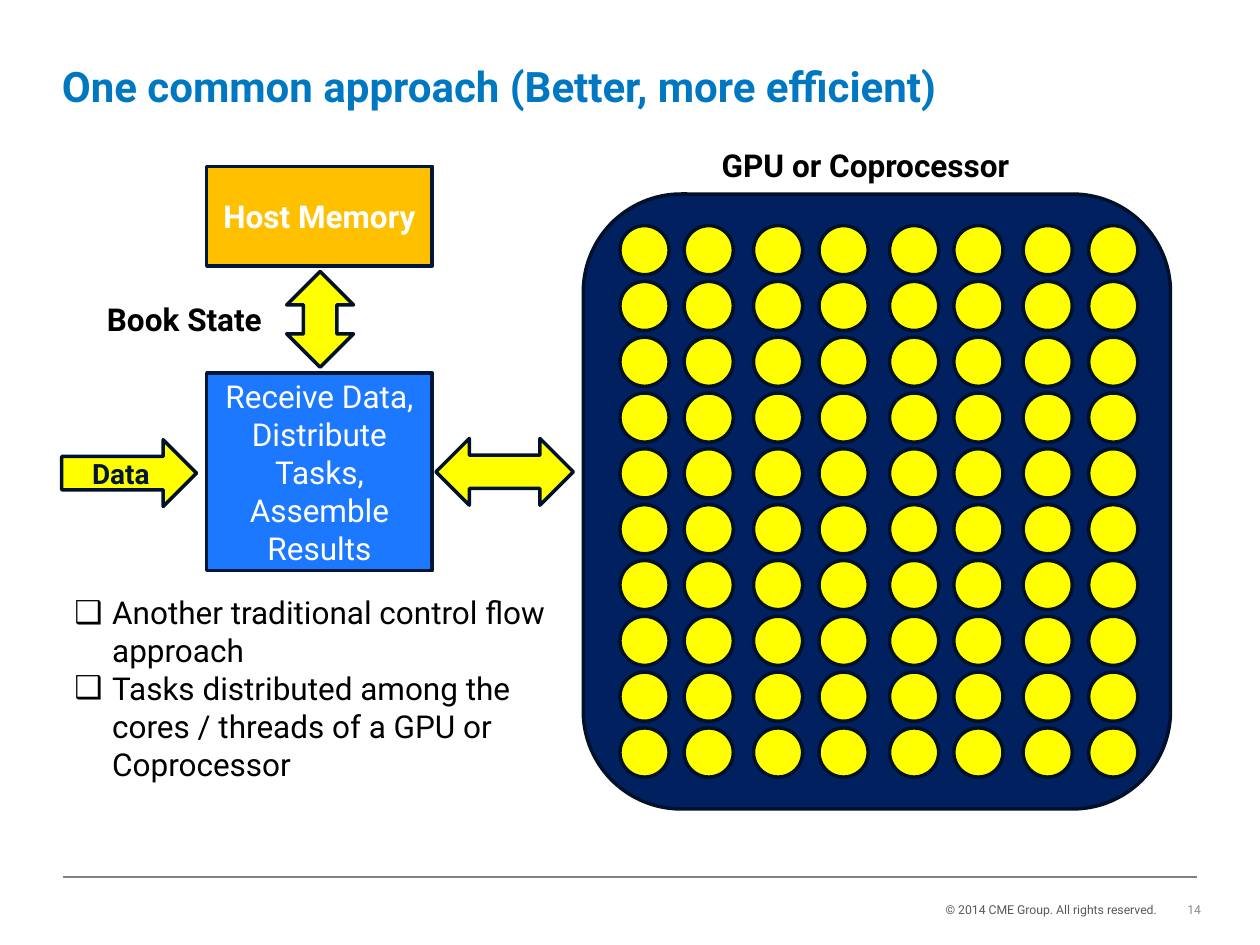
from itertools import product

from lxml.etree import SubElement
from pptx import Presentation
from pptx.dml.color import RGBColor
from pptx.enum.shapes import MSO_CONNECTOR as Connector, MSO_SHAPE as Shape
from pptx.enum.text import MSO_ANCHOR as Anchor, MSO_AUTO_SIZE as AutoSize, PP_ALIGN as Align
from pptx.oxml.ns import qn
from pptx.util import Inches, Pt

FONT = "Roboto"
BLACK, WHITE, YELLOW = "000000", "FFFFFF", "FFFF00"
NAVY, EDGE, BOX_EDGE = "002060", "001129", "001738"


def paint(color_format, value):
    color_format.rgb = RGBColor.from_string(value)


def apply(target, values):
    for key, value in values.items():
        setattr(target, key, value)


def place(part, box):
    apply(part, dict(zip(("left", "top", "width", "height"), map(Inches, box))))


def style(paragraph, size, color, bold=False, align=Align.LEFT):
    paragraph.alignment = align
    apply(paragraph.font, {"name": FONT, "size": Pt(size), "bold": bold})
    paint(paragraph.font.color, color)


def add_block(slide, kind, box, fill, edge=EDGE):
    block = slide.shapes.add_shape(kind, *map(Inches, box))
    block.shadow.inherit = False
    block.fill.solid()
    paint(block.fill.fore_color, fill)
    block.line.width = Pt(2)
    paint(block.line.color, edge)
    return block


def add_caption(block, text, size, color, bold=False):
    frame = block.text_frame
    apply(frame, {"text": text, "word_wrap": True, "vertical_anchor": Anchor.MIDDLE})
    style(frame.paragraphs[0], size, color, bold, Align.CENTER)


def add_label(slide, box, text, size, color, wrap=False, anchor=Anchor.TOP, **look):
    frame = slide.shapes.add_textbox(*map(Inches, box)).text_frame
    apply(frame, {"text": text, "word_wrap": wrap, "vertical_anchor": anchor})
    style(frame.paragraphs[0], size, color, **look)


def fill_title(slide, box, text):
    title = slide.shapes.title
    place(title, box)
    apply(title.text_frame, {
        "text": text, "word_wrap": True, "auto_size": AutoSize.NONE,
        "vertical_anchor": Anchor.TOP, "margin_left": 0, "margin_right": 0,
        "margin_top": Pt(3), "margin_bottom": 0,
    })
    style(title.text_frame.paragraphs[0], 24, "0078C1", bold=True)


def fill_list(slide, box, items):
    body = slide.placeholders[1]
    place(body, box)
    frame = body.text_frame
    apply(frame, {"text": "\n".join(items), "word_wrap": True,
                  "auto_size": AutoSize.NONE, "vertical_anchor": Anchor.TOP})
    for paragraph in frame.paragraphs:
        apply(paragraph, {"space_before": Pt(0), "space_after": Pt(0)})
        properties = paragraph._p.get_or_add_pPr()
        properties.set("marL", str(Inches(0.3)))
        properties.set("indent", str(Inches(-0.3)))
        SubElement(properties, qn("a:buChar"), char="❑")
        style(paragraph, 18, BLACK)


def draw_coprocessor(slide, box):
    left, top, width, height = box
    add_block(slide, Shape.ROUNDED_RECTANGLE, box, NAVY)
    add_label(slide, (left + 1, top - 0.43, 2.7, 0.4), "GPU or Coprocessor", 18, BLACK, bold=True)
    core, row_pitch, half_pitch = 0.39, 0.443, 2.14
    for half, offset, row in product(range(2), (0, 0.51, 1.06, 1.58), range(10)):
        x = left + 0.29 + half * half_pitch + offset
        y = top + 0.25 + row * row_pitch
        add_block(slide, Shape.OVAL, (x, y, core, core), YELLOW)


def draw_host(slide, box):
    left, top, width, height = box
    memory = add_block(slide, Shape.RECTANGLE, (left + 1.15, top, 1.79, 0.79), "FFC000", BOX_EDGE)
    add_caption(memory, "Host Memory", 18, WHITE, bold=True)

    book_state = add_block(slide, Shape.LEFT_RIGHT_ARROW,
                           (left + 1.67, top + 0.95, 0.76, 0.53), YELLOW)
    book_state.rotation = 90
    add_label(slide, (left + 0.26, top + 1.01, 1.52, 0.4), "Book State", 18, BLACK, bold=True)

    dispatcher = add_block(slide, Shape.RECTANGLE,
                           (left + 1.15, top + 1.64, 1.79, 1.57), "1C79FF", BOX_EDGE)
    add_caption(dispatcher, "Receive Data, Distribute Tasks, Assemble Results", 18, WHITE)

    data = add_block(slide, Shape.RIGHT_ARROW, (left, top + 2.17, 1.07, 0.53), YELLOW)
    add_caption(data, "Data", 16, BOX_EDGE, bold=True)
    add_block(slide, Shape.LEFT_RIGHT_ARROW, (left + 2.97, top + 2.16, 1.09, 0.53), YELLOW)


def draw_footer(slide, box):
    left, top, width, height = box
    ends = left, top, left + width, top
    rule = slide.shapes.add_connector(Connector.STRAIGHT, *map(Inches, ends))
    SubElement(rule._element.spPr, qn("a:effectLst"))
    rule.line.width = Pt(0.75)
    paint(rule.line.color, "808080")
    add_label(slide, (left + 6.75, top + 0.15, 2.03, 0.22),
              "© 2014 CME Group. All rights reserved.", 7, "595959", align=Align.RIGHT)
    add_label(slide, (left + 8.63, top + 0.06, 0.5, 0.4), "14", 7, "8C8C8C",
              wrap=True, anchor=Anchor.MIDDLE, align=Align.RIGHT)


def main():
    deck = Presentation()
    apply(deck, {"slide_width": Inches(10), "slide_height": Inches(7.5)})
    slide = deck.slides.add_slide(deck.slide_layouts[1])
    fill_title(slide, (0.49, 0.44, 9.04, 0.38), "One common approach (Better, more efficient)")
    fill_list(slide, (0.49, 4.66, 3.94, 1.92), (
        "Another traditional control flow approach",
        "Tasks distributed among the cores / threads of a GPU or Coprocessor",
    ))
    draw_coprocessor(slide, (4.63, 1.54, 4.66, 4.88))
    draw_host(slide, (0.49, 1.32, 4.06, 3.21))
    draw_footer(slide, (0.5, 6.96, 9, 0.46))
    deck.save("out.pptx")


if __name__ == "__main__":
    main()
